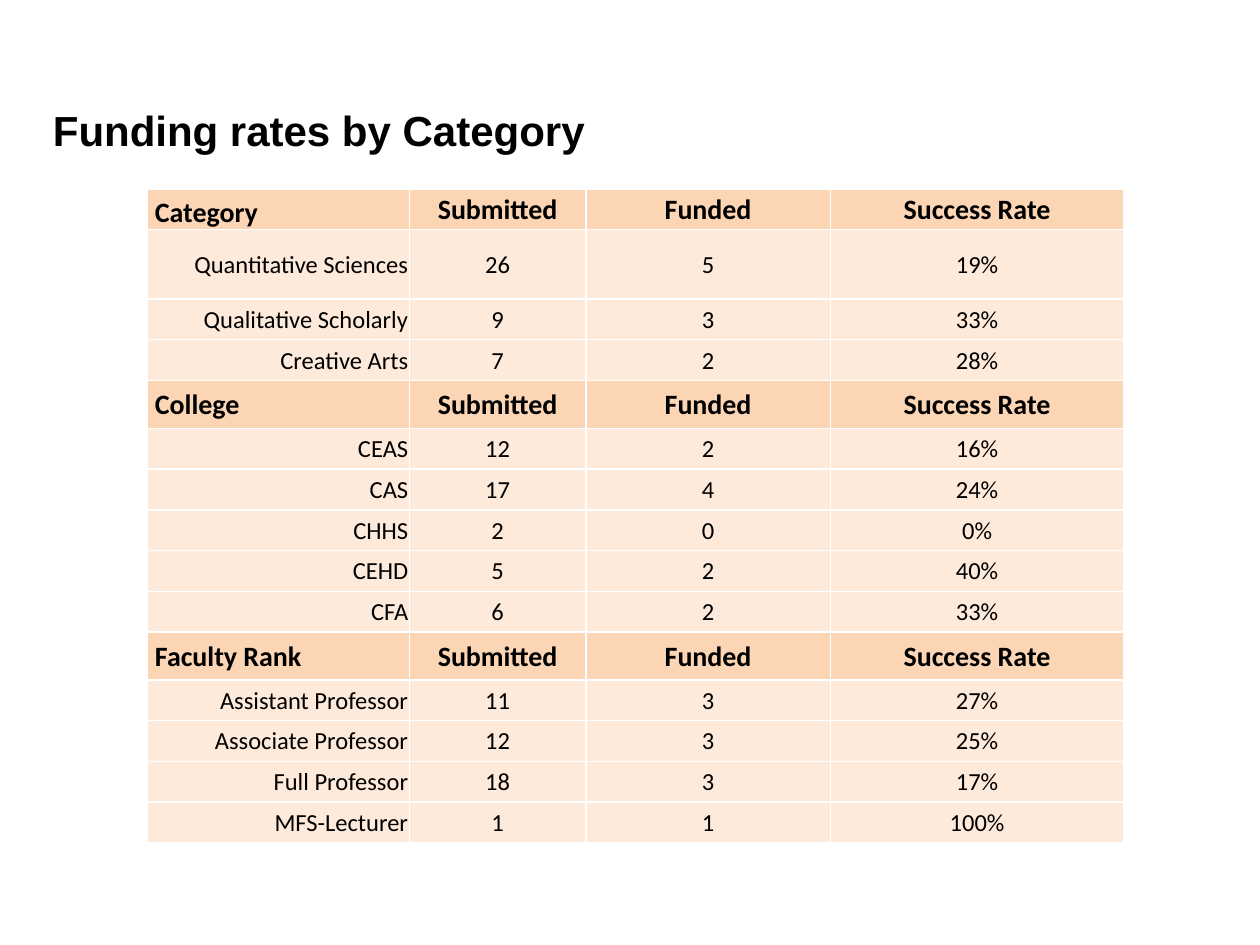
"""Build a slide with a table of funding rates by category, college and rank."""
from dataclasses import dataclass

import lxml.etree
import pptx
import pptx.dml.color
import pptx.enum.text
import pptx.oxml.ns
import pptx.slide
import pptx.table
import pptx.text.text
import pptx.util

Align = pptx.enum.text.PP_ALIGN
Anchor = pptx.enum.text.MSO_ANCHOR


@dataclass(frozen=True)
class Theme:
    title_font: str = "Arial"
    table_font: str = "Calibri"
    title_size: float = 24
    header_size: float = 16
    body_size: float = 14
    text: str = "000000"
    header_fill: str = "FCD5B5"
    body_fill: str = "FDEADA"
    border: str = "FFFFFF"
    border_width: float = 1


@dataclass(frozen=True)
class Row:
    values: tuple[str, ...]
    height: float | None = None
    is_header: bool = False
    label_anchor: Anchor = Anchor.MIDDLE


@dataclass(frozen=True)
class Section:
    name: str
    entries: tuple[tuple[str, ...], ...]
    header_height: float | None = 0.38
    first_height: float | None = None
    label_anchor: Anchor = Anchor.MIDDLE


THEME = Theme()
SLIDE_WIDTH, SLIDE_HEIGHT = 10, 7.5
TABLE_LEFT, TABLE_TOP, TABLE_HEIGHT = 1.17, 1.5, 5.19
COLUMN_WIDTHS = (2.08, 1.4, 1.94, 2.33)
CELL_MARGIN, HEADER_INDENT = 0.01, 0.06
MEASURES = ("Submitted", "Funded", "Success Rate")
SECTIONS = (
    Section("Category", (
        ("Quantitative Sciences", "26", "5", "19%"),
        ("Qualitative Scholarly", "9", "3", "33%"),
        ("Creative Arts", "7", "2", "28%"),
    ), header_height=None, first_height=0.55, label_anchor=Anchor.BOTTOM),
    Section("College", (
        ("CEAS", "12", "2", "16%"),
        ("CAS", "17", "4", "24%"),
        ("CHHS", "2", "0", "0%"),
        ("CEHD", "5", "2", "40%"),
        ("CFA", "6", "2", "33%"),
    )),
    Section("Faculty Rank", (
        ("Assistant Professor", "11", "3", "27%"),
        ("Associate Professor", "12", "3", "25%"),
        ("Full Professor", "18", "3", "17%"),
        ("MFS-Lecturer", "1", "1", "100%"),
    )),
)


def list_rows(sections: tuple[Section, ...]) -> list[Row]:
    rows = []
    for section in sections:
        rows.append(Row((section.name, *MEASURES), section.header_height, True, section.label_anchor))
        for index, entry in enumerate(section.entries):
            rows.append(Row(entry, section.first_height if index == 0 else None))
    return rows


def add_text(paragraph: pptx.text.text._Paragraph, text: str, font: str, size: float, bold: bool) -> None:
    run = paragraph.add_run()
    run.text = text
    run.font.name = font
    run.font.size = pptx.util.Pt(size)
    run.font.bold = bold
    run.font.color.rgb = pptx.dml.color.RGBColor.from_string(THEME.text)


def add_title(slide: pptx.slide.Slide, text: str) -> None:
    lengths = (pptx.util.Inches(length) for length in (0.42, 0.83, 5.33, 0.4))
    frame = slide.shapes.add_textbox(*lengths).text_frame
    frame.word_wrap = True
    frame.margin_left = frame.margin_right = frame.margin_top = frame.margin_bottom = 0
    add_text(frame.paragraphs[0], text, THEME.title_font, THEME.title_size, True)


def set_borders(cell: pptx.table._Cell) -> None:
    qualified = pptx.oxml.ns.qn
    properties = cell._tc.get_or_add_tcPr()
    for side in ("L", "R", "T", "B"):
        line = lxml.etree.SubElement(properties, qualified(f"a:ln{side}"))
        line.set("w", str(pptx.util.Pt(THEME.border_width)))
        fill = lxml.etree.SubElement(line, qualified("a:solidFill"))
        lxml.etree.SubElement(fill, qualified("a:srgbClr")).set("val", THEME.border)


def fill_cell(cell: pptx.table._Cell, row: Row, column: int) -> None:
    is_label = column == 0
    indent = HEADER_INDENT if is_label and row.is_header else CELL_MARGIN
    set_borders(cell)
    cell.fill.solid()
    color = THEME.header_fill if row.is_header else THEME.body_fill
    cell.fill.fore_color.rgb = pptx.dml.color.RGBColor.from_string(color)
    cell.margin_left = pptx.util.Inches(indent)
    cell.margin_right = cell.margin_top = pptx.util.Inches(CELL_MARGIN)
    cell.margin_bottom = 0
    cell.vertical_anchor = row.label_anchor if is_label else Anchor.MIDDLE
    paragraph = cell.text_frame.paragraphs[0]
    label_alignment = Align.LEFT if row.is_header else Align.RIGHT
    paragraph.alignment = label_alignment if is_label else Align.CENTER
    size = THEME.header_size if row.is_header else THEME.body_size
    add_text(paragraph, row.values[column], THEME.table_font, size, row.is_header)


def add_rates_table(slide: pptx.slide.Slide, rows: list[Row]) -> None:
    special_heights = [row.height for row in rows if row.height]
    regular_height = (TABLE_HEIGHT - sum(special_heights)) / (len(rows) - len(special_heights))
    lengths = (TABLE_LEFT, TABLE_TOP, sum(COLUMN_WIDTHS), TABLE_HEIGHT)
    table = slide.shapes.add_table(
        len(rows), len(COLUMN_WIDTHS), *(pptx.util.Inches(length) for length in lengths)
    ).table
    table.first_row = table.horz_banding = False
    for column, width in enumerate(COLUMN_WIDTHS):
        table.columns[column].width = pptx.util.Inches(width)
    for index, row in enumerate(rows):
        table.rows[index].height = pptx.util.Inches(row.height or regular_height)
        for column in range(len(COLUMN_WIDTHS)):
            fill_cell(table.cell(index, column), row, column)


def main() -> None:
    presentation = pptx.Presentation()
    presentation.slide_width = pptx.util.Inches(SLIDE_WIDTH)
    presentation.slide_height = pptx.util.Inches(SLIDE_HEIGHT)
    slide = presentation.slides.add_slide(presentation.slide_layouts[6])
    add_title(slide, "Funding rates by Category")
    add_rates_table(slide, list_rows(SECTIONS))
    presentation.save("out.pptx")


if __name__ == "__main__":
    main()
